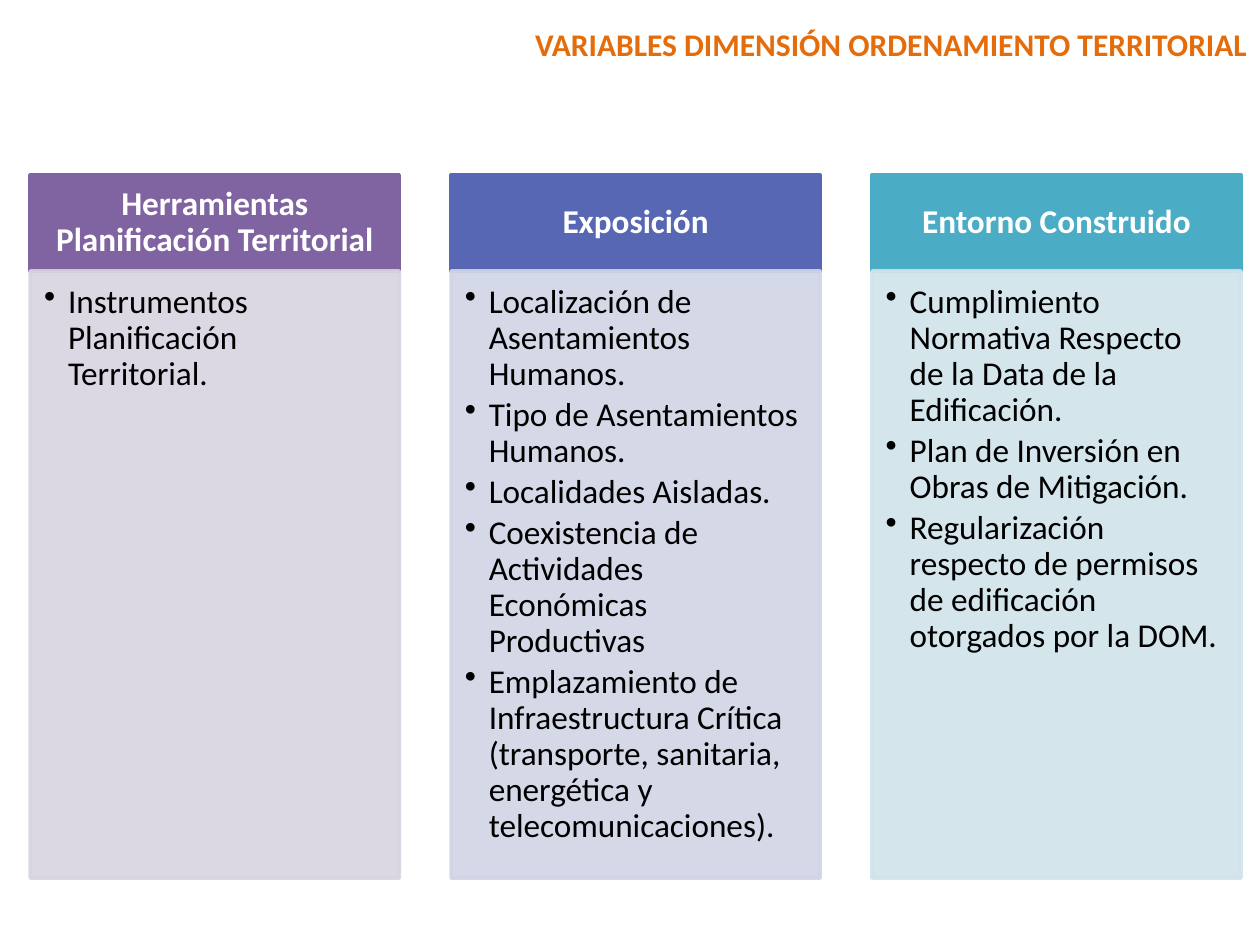
from dataclasses import dataclass

from lxml import etree
from pptx import Presentation
from pptx.dml.color import RGBColor
from pptx.enum.shapes import MSO_SHAPE
from pptx.enum.text import MSO_ANCHOR, MSO_AUTO_SIZE, PP_ALIGN
from pptx.oxml.ns import qn
from pptx.util import Inches, Pt

RECTANGLE = MSO_SHAPE.RECTANGLE
TOP, MIDDLE = MSO_ANCHOR.TOP, MSO_ANCHOR.MIDDLE
LEFT, CENTER, RIGHT = PP_ALIGN.LEFT, PP_ALIGN.CENTER, PP_ALIGN.RIGHT
NO_AUTOFIT = MSO_AUTO_SIZE.NONE


@dataclass(frozen=True)
class Theme:
    font: str = "Calibri"
    title_size: int = 18
    text_size: int = 19
    line_width: int = 2
    title: str = "E46C0A"
    heading: str = "FFFFFF"
    body: str = "000000"
    columns: tuple = (("8064A2", "D8D3E0"), ("5767B4", "D1D4E5"), ("4BACC6", "D0E3EA"))


THEME = Theme()


def write(frame, paragraphs, *, color, size=THEME.text_size, bold=False, align=LEFT,
          anchor=TOP, insets=(0.1, 0.05, 0.1, 0.05), spacing=0.9, after=0, bullets=False):
    frame.word_wrap = True
    frame.auto_size = NO_AUTOFIT
    frame.vertical_anchor = anchor
    frame.margin_left, frame.margin_top, frame.margin_right, frame.margin_bottom = map(Inches, insets)
    for index, text in enumerate(paragraphs):
        paragraph = frame.paragraphs[0] if index == 0 else frame.add_paragraph()
        paragraph.alignment = align
        paragraph.line_spacing = spacing
        paragraph.space_before = Pt(0)
        paragraph.space_after = Pt(after)
        if bullets:
            paragraph.level = 1
            properties = paragraph._p.get_or_add_pPr()
            properties.set("marL", str(Inches(0.19)))
            properties.set("indent", str(Inches(-0.19)))
            etree.SubElement(properties, qn("a:buChar"), char="•")
        run = paragraph.add_run()
        run.text = text
        run.font.name = THEME.font
        run.font.size = Pt(size)
        run.font.bold = bold
        run.font.color.rgb = RGBColor.from_string(color)


def add_panel(slide, left, top, width, height, color, opacity=100):
    panel = slide.shapes.add_shape(RECTANGLE, Inches(left), Inches(top), Inches(width), Inches(height))
    panel.shadow.inherit = False
    panel.line.width = Pt(THEME.line_width)
    panel.fill.solid()
    for paint in (panel.fill.fore_color, panel.line.color):
        paint.rgb = RGBColor.from_string(color)
    if opacity < 100:
        for tone in panel._element.spPr.iter(qn("a:srgbClr")):
            etree.SubElement(tone, qn("a:alpha"), val=str(opacity * 1000))
    return panel.text_frame


variables = [
    ("Herramientas Planificación Territorial", [
        "Instrumentos Planificación Territorial.",
    ]),
    ("Exposición", [
        "Localización de Asentamientos Humanos.",
        "Tipo de Asentamientos Humanos.",
        "Localidades Aisladas.",
        "Coexistencia de Actividades Económicas Productivas",
        "Emplazamiento de Infraestructura Crítica (transporte, sanitaria, energética y telecomunicaciones).",
    ]),
    ("Entorno Construido", [
        "Cumplimiento Normativa Respecto de la Data de la Edificación.",
        "Plan de Inversión en Obras de Mitigación.",
        "Regularización respecto de permisos de edificación otorgados por la DOM.",
    ]),
]

presentation = Presentation()
presentation.slide_width, presentation.slide_height = Inches(10), Inches(7.5)
slide = presentation.slides.add_slide(presentation.slide_layouts[5])

title = slide.shapes.title
title.left, title.top, title.width, title.height = map(Inches, (1.58, 0.15, 8.42, 0.4))
write(title.text_frame, ["VARIABLES DIMENSIÓN ORDENAMIENTO TERRITORIAL"],
      color=THEME.title, size=THEME.title_size, bold=True, align=RIGHT, spacing=1.0)

first_left, column_step, column_width = 0.24, 3.34, 2.93
heading_top, heading_height, list_height = 1.39, 0.76, 4.82

for position, ((heading, items), (strong, pale)) in enumerate(zip(variables, THEME.columns)):
    left = first_left + position * column_step
    heading_frame = add_panel(slide, left, heading_top, column_width, heading_height, strong)
    write(heading_frame, [heading], color=THEME.heading, bold=True, align=CENTER,
          anchor=MIDDLE, insets=(0.15, 0.08, 0.15, 0.08))
    list_frame = add_panel(slide, left, heading_top + heading_height, column_width,
                           list_height, pale, opacity=90)
    write(list_frame, items, color=THEME.body, insets=(0.11, 0.11, 0.15, 0.17),
          after=3, bullets=True)

presentation.save("out.pptx")
